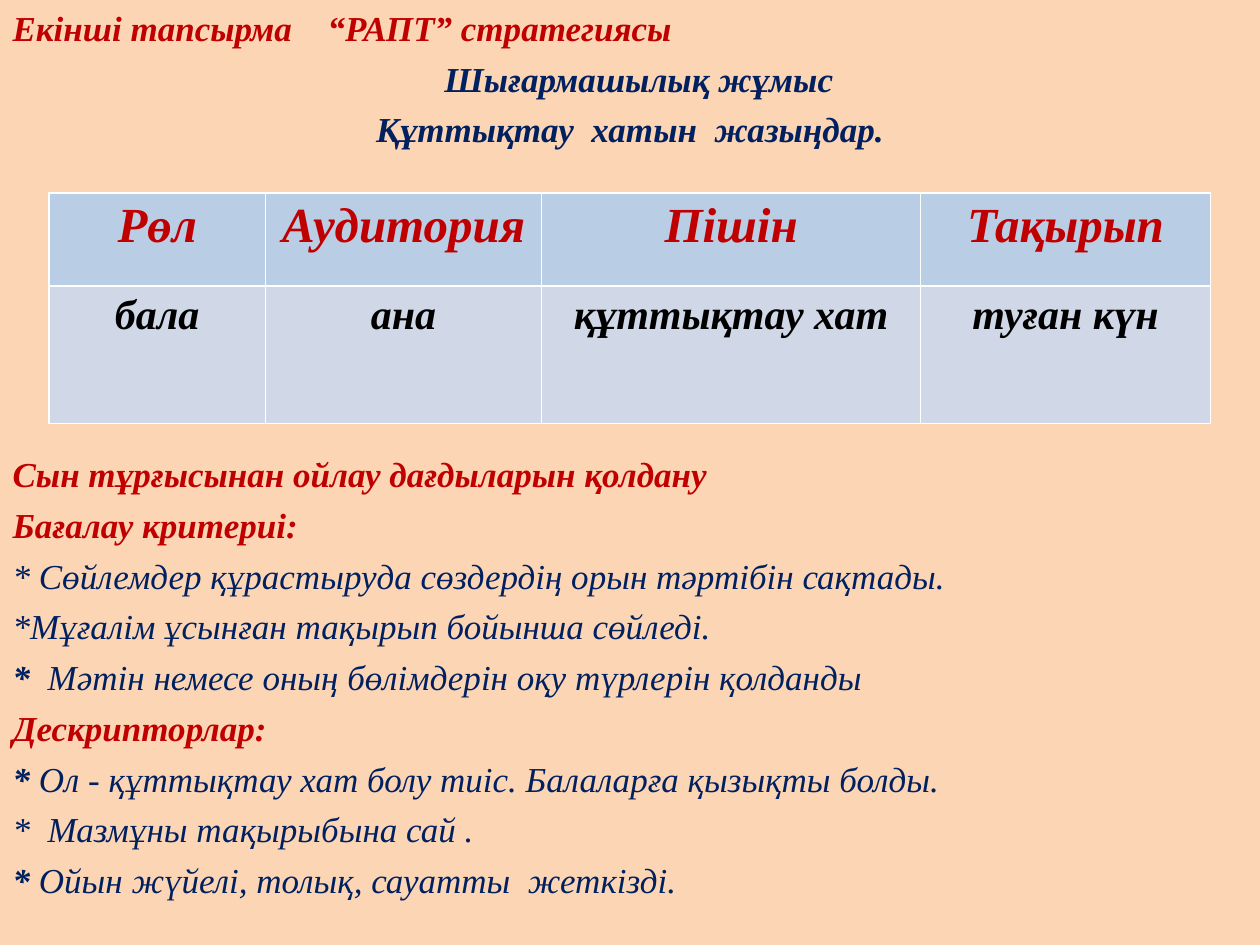
from dataclasses import dataclass

from lxml import etree
from pptx import Presentation, util as u
from pptx.dml import color
from pptx.enum import text
from pptx.oxml import ns


@dataclass(frozen=True)
class Theme:
    font: str = "Times New Roman"
    paper: str = "FCD5B5"
    red: str = "C00000"
    navy: str = "002060"
    black: str = "000000"
    white: str = "FFFFFF"
    header_fill: str = "B9CDE5"
    answer_fill: str = "D0D8E8"
    body_size: int = 20
    header_size: int = 28
    answer_size: int = 24


THEME = Theme()
LINE_GAP = 5
TABLE_GAP = 173

HEADING = [
    ("Екінші тапсырма\t“РАПТ” стратегиясы", THEME.red, text.PP_ALIGN.LEFT, 0),
    ("Шығармашылық жұмыс", THEME.navy, text.PP_ALIGN.CENTER, 0.36),
    ("Құттықтау  хатын  жазыңдар.", THEME.navy, text.PP_ALIGN.CENTER, 0),
]
SKILLS = "Сын тұрғысынан ойлау дағдыларын қолдану"
CRITERIA = ("Бағалау критериі:", [
    ("", "* Сөйлемдер құрастыруда сөздердің орын тәртібін сақтады."),
    ("", "*Мұғалім ұсынған тақырып бойынша сөйледі."),
    ("*  ", "Мәтін немесе оның бөлімдерін оқу түрлерін қолданды"),
])
DESCRIPTORS = ("Дескрипторлар:", [
    ("* ", "Ол - құттықтау хат болу тиіс. Балаларға қызықты болды."),
    ("", "*  Мазмұны тақырыбына сай ."),
    ("* ", "Ойын жүйелі, толық, сауатты  жеткізді."),
])
RAFT = [
    ("Рөл", "бала"),
    ("Аудитория", "ана"),
    ("Пішін", "құттықтау хат"),
    ("Тақырып", "туған күн"),
]
COLUMN_WIDTHS = [4.36, 5.57, 7.64, 5.84]
ROW_HEIGHTS = [1.88, 2.77]


def add_run(paragraph, words, ink, size=THEME.body_size, bold=True):
    run = paragraph.add_run()
    run.text = words
    style = {"name": THEME.font, "size": u.Pt(size), "bold": bold, "italic": True}
    for key, value in style.items():
        setattr(run.font, key, value)
    run.font.color.rgb = color.RGBColor.from_string(ink)


def add_line(frame, runs, align=text.PP_ALIGN.LEFT, gap=LINE_GAP, indent=0):
    first = frame.paragraphs[0]
    line = frame.add_paragraph() if first.runs else first
    line.alignment = align
    line.space_before = u.Pt(gap)
    props = line._p.get_or_add_pPr()
    props.set("marL", str(u.Cm(indent)))
    props.set("indent", "0")
    etree.SubElement(props, ns.qn("a:buNone"))
    for words, ink, bold in runs:
        add_run(line, words, ink, bold=bold)
    return line


def add_section(frame, heading, points):
    add_line(frame, [(heading, THEME.red, True)])
    for star, point in points:
        runs = [(star, THEME.navy, True), (point, THEME.navy, False)]
        add_line(frame, [run for run in runs if run[0]])


def set_tab(line, position):
    tabs = etree.SubElement(line._p.get_or_add_pPr(), ns.qn("a:tabLst"))
    etree.SubElement(tabs, ns.qn("a:tab"), pos=str(u.Cm(position)), algn="l")


def fill_task(task, width, height):
    place = {"left": 0, "top": 0, "width": width, "height": height}
    for key, value in place.items():
        setattr(task, key, value)
    task.fill.solid()
    task.fill.fore_color.rgb = color.RGBColor.from_string(THEME.paper)
    frame = task.text_frame
    layout = {
        "word_wrap": True,
        "auto_size": text.MSO_AUTO_SIZE.NONE,
        "vertical_anchor": text.MSO_ANCHOR.TOP,
    }
    for key, value in layout.items():
        setattr(frame, key, value)
    for words, ink, align, indent in HEADING:
        add_line(frame, [(words, ink, True)], align, indent=indent)
    set_tab(frame.paragraphs[0], 9)
    add_line(frame, [(SKILLS, THEME.red, True)], gap=TABLE_GAP)
    for heading, points in (CRITERIA, DESCRIPTORS):
        add_section(frame, heading, points)


def set_borders(cell):
    props = cell._tc.get_or_add_tcPr()
    for order, side in enumerate(("lnL", "lnR", "lnT", "lnB")):
        border = etree.Element(ns.qn(f"a:{side}"), w=str(u.Pt(1)))
        paint = etree.SubElement(border, ns.qn("a:solidFill"))
        etree.SubElement(paint, ns.qn("a:srgbClr"), val=THEME.white)
        props.insert(order, border)


def fill_cell(cell, words, fill, ink, size):
    cell.fill.solid()
    cell.fill.fore_color.rgb = color.RGBColor.from_string(fill)
    set_borders(cell)
    paragraph = cell.text_frame.paragraphs[0]
    paragraph.alignment = text.PP_ALIGN.CENTER
    add_run(paragraph, words, ink, size)


def add_raft_table(slide):
    raft = slide.shapes.add_table(
        len(ROW_HEIGHTS), len(RAFT), u.Cm(0.99), u.Cm(3.89),
        u.Cm(sum(COLUMN_WIDTHS)), u.Cm(sum(ROW_HEIGHTS))).table
    for row, height in zip(raft.rows, ROW_HEIGHTS):
        row.height = u.Cm(height)
    for index, (header, answer) in enumerate(RAFT):
        raft.columns[index].width = u.Cm(COLUMN_WIDTHS[index])
        fill_cell(raft.cell(0, index), header, THEME.header_fill,
                  THEME.red, THEME.header_size)
        fill_cell(raft.cell(1, index), answer, THEME.answer_fill,
                  THEME.black, THEME.answer_size)


def main():
    deck = Presentation()
    deck.slide_width, deck.slide_height = u.Cm(25.4), u.Cm(19.05)
    slide = deck.slides.add_slide(deck.slide_layouts.get_by_name("Title and Content"))
    title, task = slide.placeholders
    title.element.getparent().remove(title.element)
    fill_task(task, deck.slide_width, deck.slide_height)
    add_raft_table(slide)
    deck.save("out.pptx")


if __name__ == "__main__":
    main()
